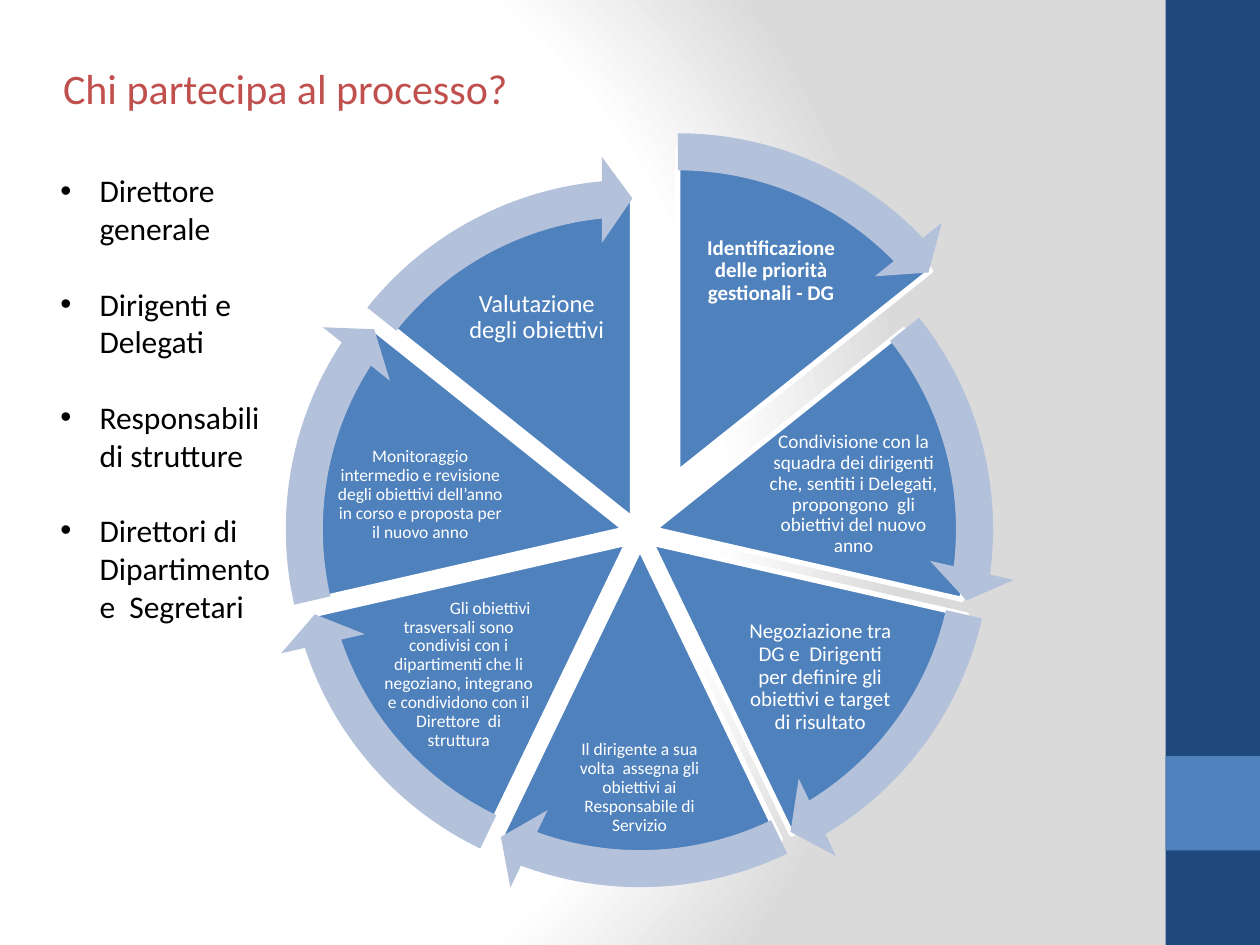
from dataclasses import dataclass

from pptx import Presentation
from pptx.dml.color import RGBColor
from pptx.enum.shapes import MSO_AUTO_SHAPE_TYPE as Preset
from pptx.enum.text import MSO_ANCHOR as Anchor, MSO_AUTO_SIZE as AutoSize, PP_ALIGN as Align
from pptx.oxml import parse_xml
from pptx.oxml.ns import nsdecls
from pptx.shapes.autoshape import Shape
from pptx.slide import Slide
from pptx.text.text import Font
from pptx.util import Inches, Pt

COLORS = {
    "navy": "1F497D",
    "blue": "4F81BD",
    "arrow": "B3C1DB",
    "white": "FFFFFF",
    "grey": "DADADA",
    "red": "C0504D",
    "black": "000000",
}
FONT = "Calibri"
PIE_SIZE = 5.13
ARROW_SIZE = 5.77
ARROW_THICKNESS = 0.051
ARROW_HEAD_WIDTH = 0.059
ARROW_HEAD_DEGREES = 5.46
DEGREE = 0.6  # one degree as an adjustment value
Box = tuple[float, float, float, float]


@dataclass(frozen=True)
class Stage:
    text: str
    center: tuple[float, float]
    label: Box
    size: float
    bold: bool = False
    inset: float = 0.02
    indent: float = 0
    pie: tuple[float, float] = (PIE_SIZE, PIE_SIZE)


STAGES = [
    Stage("Identificazione delle priorità gestionali - DG",
          (5.38, 3.75), (5.51, 1.66, 1.22, 0.98), 12, bold=True),
    Stage("Condivisione con la squadra dei dirigenti che, sentiti i Delegati, "
          "propongono  gli obiettivi del nuovo anno",
          (5.19, 4.2), (6.07, 3.49, 1.41, 0.87), 11, pie=(5, 5.2)),
    Stage("Negoziazione tra DG e  Dirigenti per definire gli obiettivi e target di risultato",
          (5.17, 4.31), (5.9, 4.9, 1.22, 0.95), 12),
    Stage("Il dirigente a sua volta  assegna gli obiettivi ai Responsabile di Servizio",
          (5.08, 4.35), (4.48, 5.82, 1.19, 0.86), 10, inset=0.01),
    Stage("Gli obiettivi trasversali sono condivisi con i dipartimenti che li negoziano, "
          "integrano e condividono con il Direttore  di\vstruttura",
          (4.98, 4.31), (3.03, 4.88, 1.22, 0.95), 10, inset=0.01, indent=0.5),
    Stage("Monitoraggio intermedio e revisione degli obiettivi dell’anno in corso "
          "e proposta per il nuovo anno",
          (4.96, 4.2), (2.65, 3.5, 1.37, 0.86), 10, inset=0.01),
    Stage("Valutazione degli obiettivi",
          (5.02, 4.12), (3.65, 2.03, 1.22, 0.98), 14),
]
STAGE_DEGREES = 360 / len(STAGES)
PARTICIPANTS = [
    "Direttore generale",
    "Dirigenti e Delegati",
    "Responsabili di strutture",
    "Direttori di Dipartimento e  Segretari",
]


def rgb(name: str) -> RGBColor:
    return RGBColor.from_string(COLORS[name])


def style_font(font: Font, size: float, color: str, bold: bool = False) -> None:
    font.name = FONT
    font.size = Pt(size)
    font.bold = bold
    font.color.rgb = rgb(color)


def place(shape: Shape, box: Box) -> None:
    shape.left, shape.top, shape.width, shape.height = map(Inches, box)


def centered(center: tuple[float, float], width: float, height: float) -> Box:
    return center[0] - width / 2, center[1] - height / 2, width, height


def set_background(slide: Slide) -> None:
    stops = "".join(
        f'<a:gs pos="{position}"><a:srgbClr val="{COLORS[color]}"/></a:gs>'
        for position, color in [(0, "white"), (75000, "white"), (100000, "grey")]
    )
    background = parse_xml(
        f'<p:bg {nsdecls("p", "a")}><p:bgPr><a:gradFill rotWithShape="1">'
        f'<a:gsLst>{stops}</a:gsLst><a:path path="circle">'
        '<a:fillToRect l="20000" t="50000" r="100000" b="50000"/></a:path>'
        "</a:gradFill><a:effectLst/></p:bgPr></p:bg>"
    )
    slide.element.cSld.insert(0, background)


def add_filled(slide: Slide, preset: Preset, box: Box, color: str) -> Shape:
    """Add a preset shape with a flat fill, no outline and no shadow."""
    shape = slide.shapes.add_shape(preset, *map(Inches, box))
    shape.shadow.inherit = False
    shape.fill.solid()
    shape.fill.fore_color.rgb = rgb(color)
    shape.line.fill.background()
    return shape


def adjust(shape: Shape, values: list[float]) -> None:
    for index, value in enumerate(values):
        shape.adjustments[index] = value


def stage_angles(index: int) -> tuple[float, float]:
    """Return start and end in degrees, clockwise from three o'clock."""
    start = 270 + index * STAGE_DEGREES
    return start, start + STAGE_DEGREES


def add_wedge(slide: Slide, index: int, stage: Stage) -> None:
    wedge = add_filled(slide, Preset.PIE, centered(stage.center, *stage.pie), "blue")
    wedge.line.color.rgb = rgb("white")
    wedge.line.width = Pt(3)
    adjust(wedge, [angle % 360 * DEGREE for angle in stage_angles(index)])


def add_label(slide: Slide, stage: Stage) -> None:
    frame = slide.shapes.add_textbox(*map(Inches, stage.label)).text_frame
    frame.word_wrap = True
    frame.vertical_anchor = Anchor.MIDDLE
    frame.margin_left = frame.margin_right = Inches(stage.inset)
    frame.margin_top = frame.margin_bottom = Inches(stage.inset)
    paragraph = frame.paragraphs[0]
    paragraph.text = stage.text
    paragraph.alignment = Align.CENTER
    paragraph.line_spacing = 0.9
    style_font(paragraph.font, stage.size, "white", stage.bold)
    if stage.indent:
        paragraph._p.get_or_add_pPr().set("indent", str(Inches(stage.indent)))


def add_arrow(slide: Slide, index: int, stage: Stage) -> None:
    box = centered(stage.center, ARROW_SIZE, ARROW_SIZE)
    arrow = add_filled(slide, Preset.CIRCULAR_ARROW, box, "arrow")
    start, end = stage_angles(index)
    adjust(arrow, [
        ARROW_THICKNESS,
        ARROW_HEAD_DEGREES * DEGREE,
        (end - ARROW_HEAD_DEGREES) % 360 * DEGREE,
        start % 360 * DEGREE,
        ARROW_HEAD_WIDTH,
    ])


def fill_title(title: Shape) -> None:
    place(title, (0.4, 0.21, 4.92, 0.97))
    frame = title.text_frame
    frame.auto_size = AutoSize.NONE
    frame.vertical_anchor = Anchor.MIDDLE
    paragraph = frame.paragraphs[0]
    paragraph.text = "Chi partecipa al processo?"
    paragraph.alignment = Align.LEFT
    style_font(paragraph.font, 24, "red")


def fill_participants(body: Shape) -> None:
    place(body, (0.38, 1.31, 1.94, 4.34))
    frame = body.text_frame
    frame.auto_size = AutoSize.NONE
    frame.text = "\n".join(PARTICIPANTS)
    for index, paragraph in enumerate(frame.paragraphs):
        paragraph.space_before = Pt(21.5 if index else 0)
        style_font(paragraph.font, 18, "black")
        properties = paragraph._p.get_or_add_pPr()
        properties.set("marL", str(Inches(0.31)))
        properties.set("indent", str(Inches(-0.31)))


def main() -> None:
    presentation = Presentation()
    presentation.slide_width, presentation.slide_height = Inches(10), Inches(7.5)
    slide = presentation.slides.add_slide(presentation.slide_layouts[1])
    set_background(slide)
    add_filled(slide, Preset.RECTANGLE, (9.25, 0, 0.75, 7.5), "navy")
    add_filled(slide, Preset.RECTANGLE, (9.25, 6, 0.75, 0.75), "blue")
    for index, stage in enumerate(STAGES):
        add_wedge(slide, index, stage)
        add_label(slide, stage)
    for index, stage in enumerate(STAGES):
        add_arrow(slide, index, stage)
    fill_title(slide.shapes.title)
    fill_participants(slide.placeholders[1])
    presentation.save("out.pptx")


if __name__ == "__main__":
    main()
